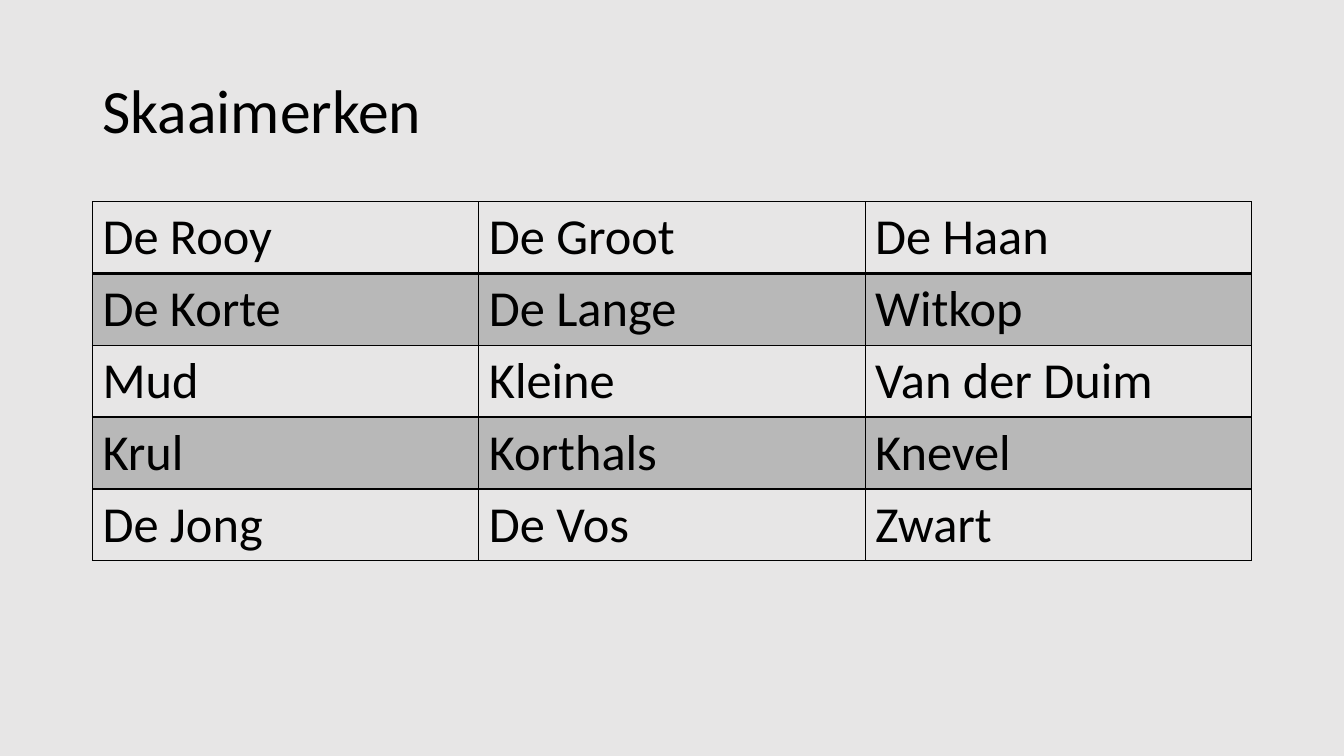
from lxml import etree
from pptx import Presentation
from pptx.dml.color import RGBColor
from pptx.enum import text
from pptx.oxml import ns
from pptx.util import Cm, Pt

FONT = "Calibri"
BLACK = "000000"
NAMES = [
    ["De Rooy", "De Groot", "De Haan"],
    ["De Korte", "De Lange", "Witkop"],
    ["Mud", "Kleine", "Van der Duim"],
    ["Krul", "Korthals", "Knevel"],
    ["De Jong", "De Vos", "Zwart"],
]


def paint(color, value):
    color.rgb = RGBColor.from_string(value)


def style(para, size):
    para.font.name = FONT
    para.font.size = Pt(size)
    para.font.bold = False
    paint(para.font.color, BLACK)


def add(parent, tag, **attrs):
    return etree.SubElement(parent, ns.qn(tag), **attrs)


def rule(cell, side, width):
    """Draw one border; call before the cell gets its fill."""
    props = cell._tc.get_or_add_tcPr()
    line = add(props, "a:ln" + side, w=str(Pt(width)))
    add(add(line, "a:solidFill"), "a:srgbClr", val=BLACK)


def shade(cell, value, alpha):
    cell.fill.solid()
    paint(cell.fill.fore_color, value)
    tint = cell._tc.tcPr.find(".//" + ns.qn("a:solidFill") + "[last()]")
    tint = cell._tc.tcPr.find(ns.qn("a:solidFill"))[0]
    add(tint, "a:alpha", val=str(alpha * 1000))


def set_title(slide, words):
    title = slide.shapes.title
    title.left, title.top = Cm(2.33), Cm(1.01)
    title.width, title.height = Cm(29.21), Cm(3.68)
    frame = title.text_frame
    frame.text = words
    frame.vertical_anchor = text.MSO_ANCHOR.MIDDLE
    para = frame.paragraphs[0]
    para.alignment = text.PP_ALIGN.LEFT
    para.line_spacing = 0.9
    style(para, 44)


def add_names(slide, names):
    high = Cm(1.81)
    frame = slide.shapes.add_table(
        len(names), len(names[0]), Cm(2.33), Cm(5.08),
        Cm(29.21), high * len(names))
    table = frame.table
    table.first_row = table.horz_banding = False
    for r, row in enumerate(names):
        table.rows[r].height = high
        for c, name in enumerate(row):
            cell = table.cell(r, c)
            cell.text = name
            style(cell.text_frame.paragraphs[0], 36)
            for side in "LRTB":
                thick = (r, side) in ((0, "B"), (1, "T"))
                rule(cell, side, 2 if thick else 1)
            if r % 2:
                shade(cell, BLACK, 20)
            else:
                cell.fill.background()


def main():
    prs = Presentation()
    prs.slide_width, prs.slide_height = Cm(33.87), Cm(19.05)
    slide = prs.slides.add_slide(prs.slide_layouts[5])
    back = slide.background.fill
    back.solid()
    paint(back.fore_color, "E7E6E6")
    set_title(slide, "Skaaimerken")
    add_names(slide, NAMES)
    prs.save("out.pptx")


if __name__ == "__main__":
    main()
